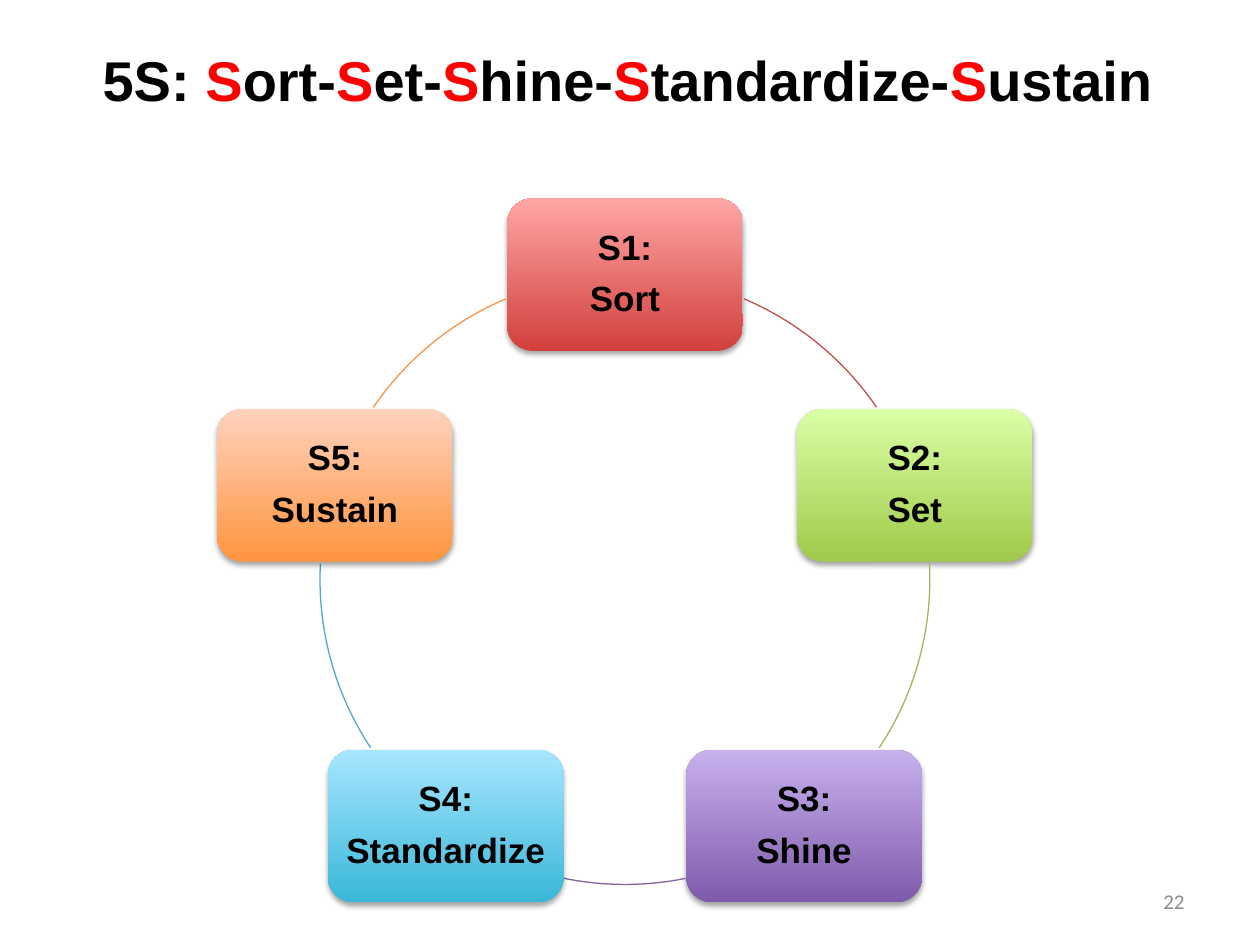
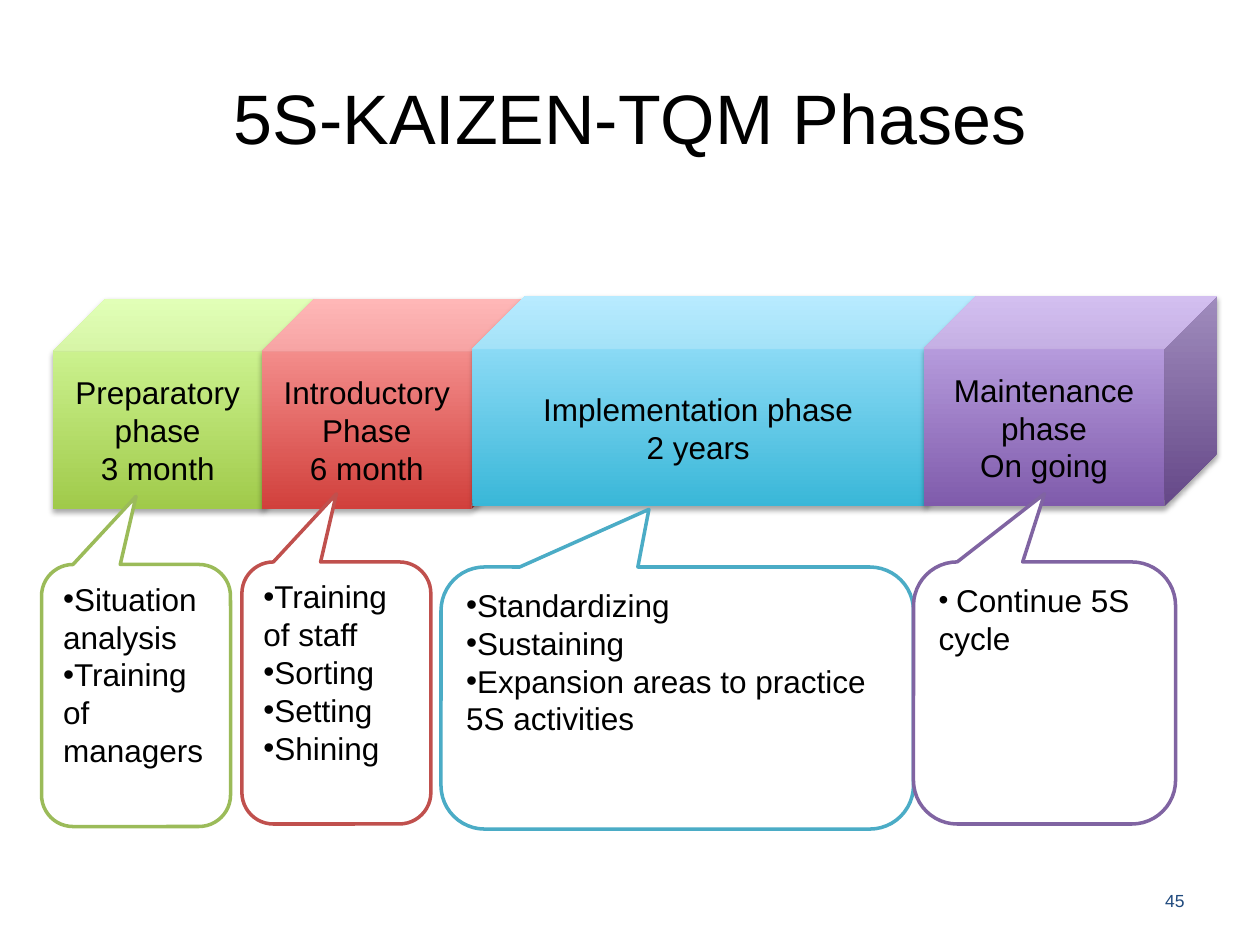
from dataclasses import dataclass
from math import cos, radians, sin

from lxml import etree
from pptx import Presentation
from pptx.dml.color import RGBColor
from pptx.enum.shapes import MSO_SHAPE as SHAPE
from pptx.enum.text import MSO_ANCHOR as ANCHOR, PP_ALIGN as ALIGN
from pptx.oxml import parse_xml
from pptx.oxml.ns import qn
from pptx.util import Inches, Pt

NS = 'xmlns:a="http://schemas.openxmlformats.org/drawingml/2006/main"'
SHADOW = (f'<a:effectLst {NS}><a:outerShdw blurRad="39370" dist="22860" dir="5400000" '
          'rotWithShape="0"><a:srgbClr val="000000"><a:alpha val="35000"/></a:srgbClr>'
          '</a:outerShdw></a:effectLst>')


@dataclass(frozen=True)
class Hue:
    dark: str
    light: str
    line: str


@dataclass(frozen=True)
class Theme:
    font: str = "Arial"
    number_font: str = "Calibri"
    text: str = "000000"
    accent: str = "FF0000"
    paper: str = "FFFFFF"
    grey: str = "8C8C8C"
    navy: str = "1F497D"
    ring_title: int = 32
    phase_title: int = 40
    box: int = 20
    body: int = 18
    small: int = 16
    red: Hue = Hue("D1403C", "FFA6A5", "C0504D")
    green: Hue = Hue("A0CA4A", "DAFFA5", "9BBB59")
    purple: Hue = Hue("7F5BAB", "C8B0ED", "8064A2")
    blue: Hue = Hue("39B7D8", "A7E6FF", "4BACC6")
    orange: Hue = Hue("FF953E", "FFD2BD", "F79646")


T = Theme()


def rgb(code):
    return RGBColor.from_string(code)


# Text
def write(tf, paragraphs, size, align=ALIGN.CENTER, color=T.text, font=T.font, bold=False):
    """Fill a frame; a paragraph is a string or a list of (text, size, color) runs."""
    tf.word_wrap = True
    for i, content in enumerate(paragraphs):
        p = tf.paragraphs[0] if i == 0 else tf.add_paragraph()
        p.alignment = align
        runs = [(content, size, color)] if isinstance(content, str) else content
        for text, run_size, run_color in runs:
            r = p.add_run()
            r.text = text
            r.font.name, r.font.size, r.font.bold = font, Pt(run_size), bold
            r.font.color.rgb = rgb(run_color)


def add_bullet(p):
    pPr = p._p.get_or_add_pPr()
    pPr.set("marL", "0")
    pPr.set("indent", "0")
    etree.SubElement(pPr, qn("a:buFont"), typeface=T.font)
    etree.SubElement(pPr, qn("a:buChar"), char="•")


def set_title(slide, box, runs, size, bold=False):
    sp = slide.shapes.title
    sp.left, sp.top, sp.width, sp.height = map(Inches, box)
    sp.text_frame.vertical_anchor = ANCHOR.MIDDLE
    write(sp.text_frame, [runs], size, bold=bold)


def add_number(slide, number, size, color, font):
    box = slide.shapes.add_textbox(*map(Inches, (7.17, 6.95, 2.33, 0.4)))
    box.text_frame.vertical_anchor = ANCHOR.MIDDLE
    write(box.text_frame, [number], size, ALIGN.RIGHT, color, font)


# Shapes
def add_glossy(slide, kind, box, hue):
    """Preset shape with a vertical gradient and a soft shadow."""
    sp = slide.shapes.add_shape(kind, *map(Inches, box))
    sp.fill.gradient()
    sp.fill.gradient_angle = 90
    for stop, color, position in zip(sp.fill.gradient_stops, (hue.dark, hue.light), (0, 1)):
        stop.color.rgb = rgb(color)
        stop.position = position
    sp.line.fill.background()
    sp._element.spPr.append(parse_xml(SHADOW))
    return sp


def add_ring_box(slide, center, lines, hue):
    w, h = 1.87, 1.21
    x, y = center
    sp = add_glossy(slide, SHAPE.ROUNDED_RECTANGLE, (x - w / 2, y - h / 2, w, h), hue)
    tf = sp.text_frame
    tf.margin_left = tf.margin_right = tf.margin_top = tf.margin_bottom = Inches(0.08)
    write(tf, lines, T.box, bold=True)
    for p in tf.paragraphs:
        p.line_spacing = 0.9
        p.space_after = Pt(8)


def add_arc(slide, center, radius, start, end, color):
    """Arc of a circle, with angles clockwise from the top."""
    x, y = center
    box = (x - radius, y - radius, 2 * radius, 2 * radius)
    sp = slide.shapes.add_shape(SHAPE.ARC, *map(Inches, box))
    for i, angle in enumerate((start, end)):
        sp.adjustments[i] = (angle - 90) % 360 * 0.6  # degrees to adjustment units
    sp.fill.background()
    sp.line.color.rgb = rgb(color)
    sp.line.width = Pt(0.75)
    sp.shadow.inherit = False


def add_phase(slide, left, top, width, lines, hue):
    sp = add_glossy(slide, SHAPE.CUBE, (left, top, width, 1.67), hue)
    write(sp.text_frame, lines, T.body)


def add_callout(slide, left, top, width, tip, items, hue):
    sp = slide.shapes.add_shape(SHAPE.ROUNDED_RECTANGULAR_CALLOUT,
                                *map(Inches, (left, top, width, 2.08)))
    sp.adjustments[0], sp.adjustments[1] = tip
    sp.fill.solid()
    sp.fill.fore_color.rgb = rgb(T.paper)
    sp.line.color.rgb = rgb(hue.line)
    sp.line.width = Pt(2)
    sp.shadow.inherit = False
    sp.text_frame.vertical_anchor = ANCHOR.TOP
    write(sp.text_frame, items, T.body, ALIGN.LEFT)
    for p in sp.text_frame.paragraphs:
        add_bullet(p)


# Slides
def build_ring(slide):
    words = ("Sort", "Set", "Shine", "Standardize", "Sustain")
    hues = (T.red, T.green, T.purple, T.blue, T.orange)
    arcs = ((23, 55.6), (87, 123.5), (168.5, 191.5), (236.5, 273), (304.4, 337))
    center, radius = (4.96, 4.6), 2.42

    title = [("5S: ", T.ring_title, T.text)]
    for i, word in enumerate(words):
        rest = word[1:] + ("-" if i < len(words) - 1 else "")
        title += [(word[0], T.ring_title, T.accent), (rest, T.ring_title, T.text)]
    set_title(slide, (0.29, 0.17, 9.38, 0.92), title, T.ring_title, bold=True)

    for i, (word, hue, arc) in enumerate(zip(words, hues, arcs)):
        angle = radians(i * 360 / len(words))
        spot = (center[0] + radius * sin(angle), center[1] - radius * cos(angle))
        add_ring_box(slide, spot, [f"S{i + 1}:", word], hue)
        add_arc(slide, center, radius, *arc, hue.line)
    add_number(slide, "22", 12, T.grey, T.number_font)


def build_phases(slide):
    set_title(slide, (0.5, 0.3, 9, 1.25), "5S-KAIZEN-TQM Phases", T.phase_title)

    phases = (
        (0.42, 2.37, 2.08, ["Preparatory phase", "3 month"], T.green),
        (2.08, 2.37, 2.08, ["Introductory", "Phase", "6 month"], T.red),
        (3.75, 2.35, 4, ["Implementation phase", "2 years"], T.blue),
        (7.33, 2.35, 2.33, ["Maintenance phase", "On going"], T.purple),
    )
    for phase in phases:
        add_phase(slide, *phase)

    tip, wide_tip = (0, -0.76), (-0.06, -0.72)
    cycle = [(" ", T.small, T.text), ("Continue 5S cycle", T.body, T.text)]
    callouts = (
        (0.33, 4.48, 1.5, tip, ["Situation analysis", "Training of managers"], T.green),
        (1.92, 4.46, 1.5, tip, ["Training of staff", "Sorting", "Setting", "Shining"], T.red),
        (3.5, 4.5, 3.75, wide_tip, ["Standardizing", "Sustaining",
                                    "Expansion areas to practice 5S activities"], T.blue),
        (7.25, 4.46, 2.08, tip, [cycle], T.purple),
    )
    for callout in callouts:
        add_callout(slide, *callout)
    add_number(slide, "45", 10, T.navy, T.font)


def main():
    prs = Presentation()
    prs.slide_width, prs.slide_height = Inches(10), Inches(7.5)
    title_only = prs.slide_layouts[5]
    for build in (build_ring, build_phases):
        build(prs.slides.add_slide(title_only))
    prs.save("out.pptx")


if __name__ == "__main__":
    main()
